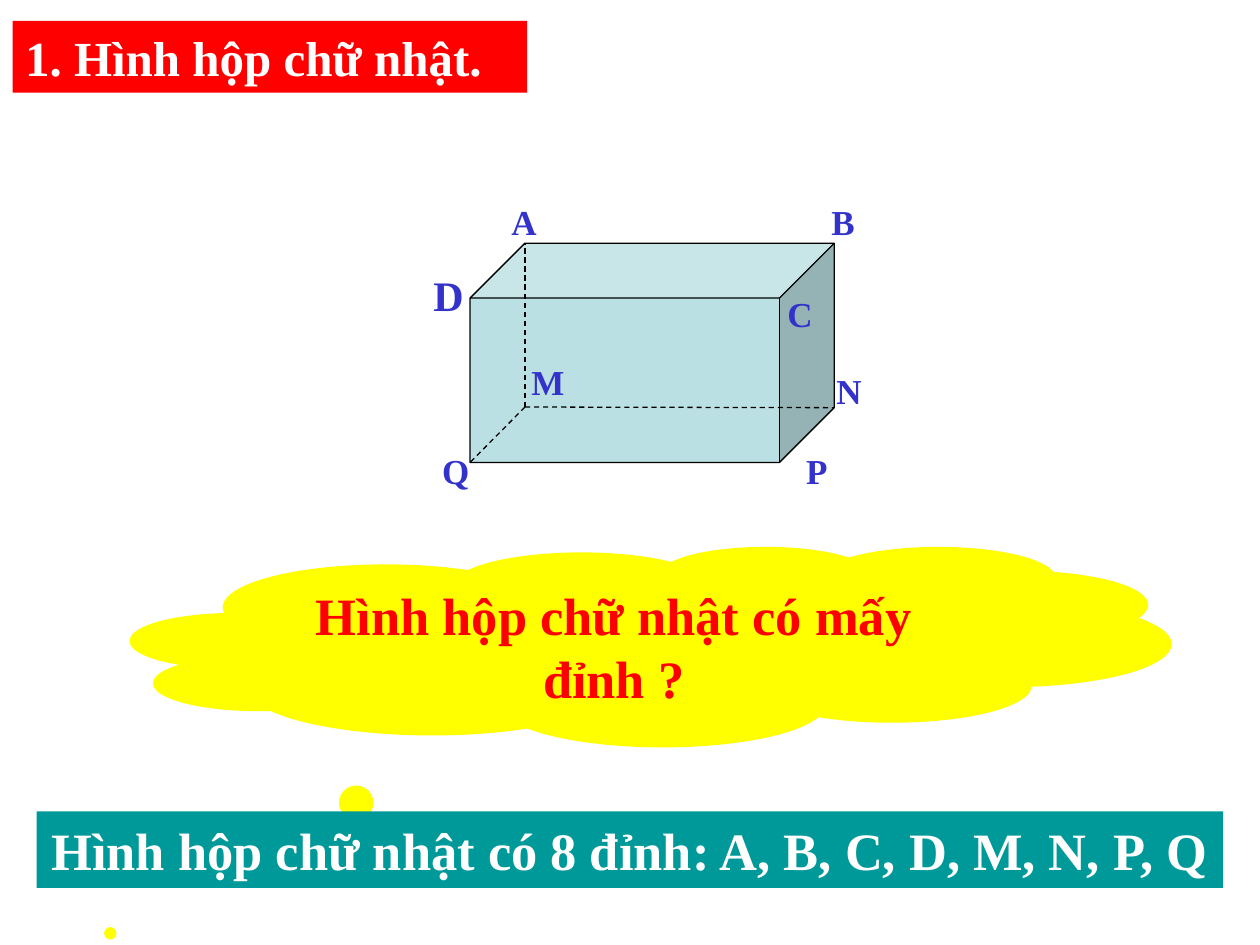
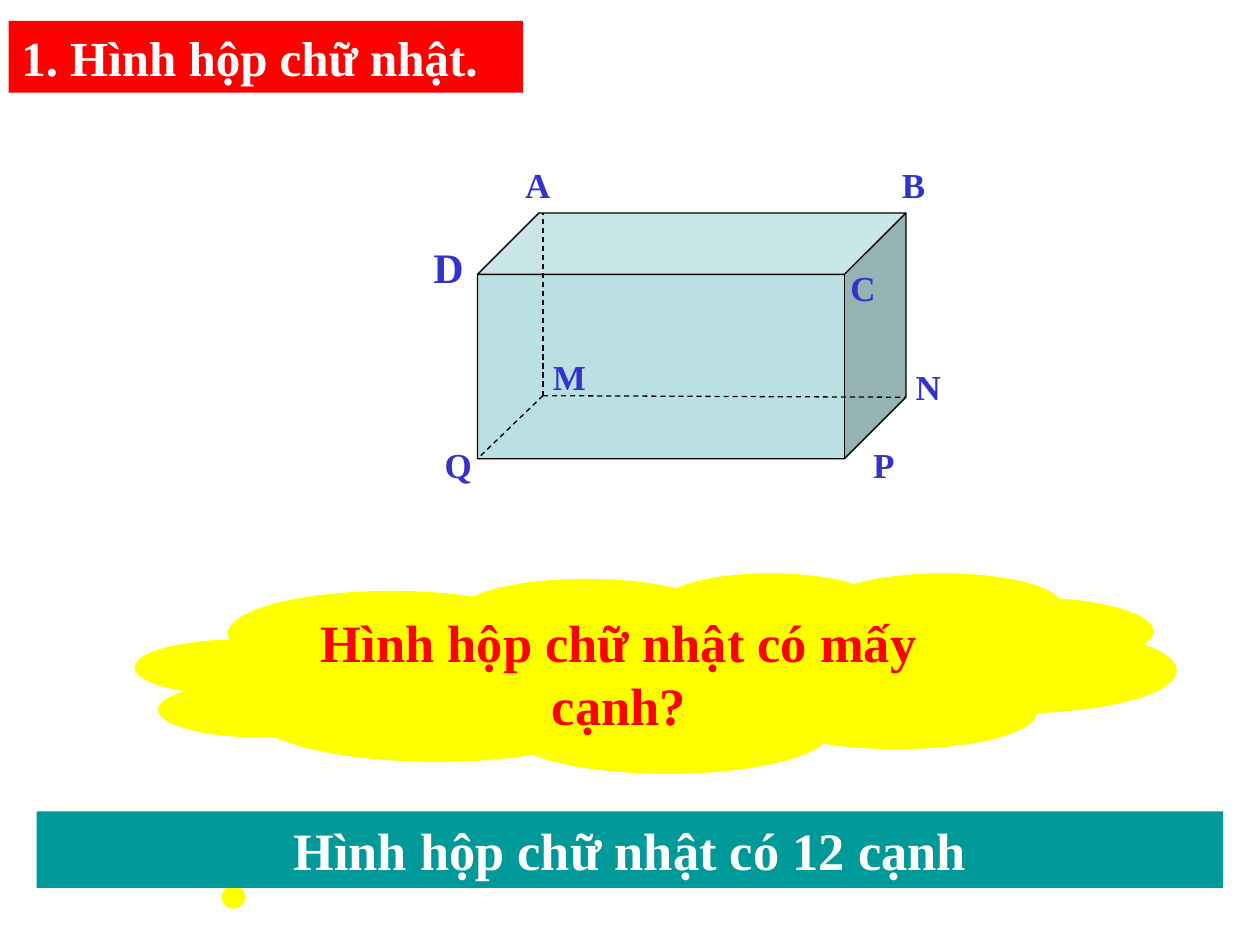
from dataclasses import dataclass

from lxml.etree import SubElement
from pptx import Presentation
from pptx.dml.color import RGBColor
from pptx.enum.dml import MSO_LINE
from pptx.enum.shapes import MSO_CONNECTOR, MSO_SHAPE
from pptx.enum.text import MSO_ANCHOR, MSO_AUTO_SIZE, PP_ALIGN
from pptx.oxml.ns import qn
from pptx.presentation import Presentation as Deck
from pptx.shapes.autoshape import Shape
from pptx.shapes.shapetree import GroupShapes
from pptx.slide import Slide
from pptx.util import Pt

Point = tuple[float, float]


@dataclass(frozen=True)
class Theme:
    font: str = "Times New Roman"
    heading_fill: RGBColor = RGBColor(0xFF, 0x00, 0x00)
    answer_fill: RGBColor = RGBColor(0x00, 0x99, 0x99)
    cloud_fill: RGBColor = RGBColor(0xFF, 0xFF, 0x00)
    cuboid_fill: RGBColor = RGBColor(0xBB, 0xE0, 0xE3)
    white: RGBColor = RGBColor(0xFF, 0xFF, 0xFF)
    question: RGBColor = RGBColor(0xFF, 0x00, 0x00)
    vertex: RGBColor = RGBColor(0x33, 0x33, 0xCC)
    edge: RGBColor = RGBColor(0x00, 0x00, 0x00)
    heading_size: float = 28
    sentence_size: float = 30
    vertex_size: float = 20
    large_vertex_size: float = 24
    line_width: float = 0.75


@dataclass(frozen=True)
class Cuboid:
    left: float
    top: float
    width: float
    height: float
    hidden_corner: Point
    label_width: float
    labels: dict[str, Point]


@dataclass(frozen=True)
class Lesson:
    heading_left: float
    cloud_at: Point
    question: str
    answer: str
    cuboid: Cuboid


THEME = Theme()
HEADING = "1. Hình hộp chữ nhật."
DEPTH = 0.25
LARGE_LABEL = "D"

LESSONS = [
    Lesson(
        7.2, (74.9, 312.5),
        "Hình hộp chữ nhật có mấy đỉnh ?",
        "Hình hộp chữ nhật có 8 đỉnh: A, B, C, D, M, N, P, Q",
        Cuboid(
            268.6, 139, 208.1, 125.3, (300, 232.6), 39.6,
            {"A": (285.1, 110.9), "B": (468, 110.9), "C": (442.8, 163.4),
             "D": (240.5, 150.5), "M": (296.6, 202.3), "N": (470.9, 207.4),
             "P": (453.6, 253.4), "Q": (245.5, 253.4)},
        ),
    ),
    Lesson(
        5, (77.8, 327.6),
        "Hình hộp chữ nhật có mấy cạnh?",
        "Hình hộp chữ nhật có 12 cạnh",
        Cuboid(
            272.9, 121.7, 244.8, 140.4, (310.3, 226.1), 46,
            {"A": (293, 90), "B": (508.3, 90), "C": (478.8, 149),
             "D": (240.5, 134.6), "M": (308.9, 199.4), "N": (516.2, 205.2),
             "P": (491.8, 249.8), "Q": (247, 249.8)},
        ),
    ),
]


def write(sp: Shape, text: str, size: float, color: RGBColor,
          align: PP_ALIGN = PP_ALIGN.LEFT,
          anchor: MSO_ANCHOR = MSO_ANCHOR.MIDDLE) -> None:
    tf = sp.text_frame
    tf.text = text
    tf.word_wrap = True
    tf.auto_size = MSO_AUTO_SIZE.NONE
    tf.vertical_anchor = anchor
    p = tf.paragraphs[0]
    p.alignment = align
    font = p.runs[0].font
    font.name, font.size, font.bold = THEME.font, Pt(size), True
    font.color.rgb = color


def fill(sp: Shape, color: RGBColor, line: RGBColor | None = None) -> None:
    """Give a shape a flat fill, with an outline only when a colour is named."""
    sp.shadow.inherit = False
    sp.fill.solid()
    sp.fill.fore_color.rgb = color
    if line is None:
        sp.line.fill.background()
    else:
        sp.line.color.rgb = line
        sp.line.width = Pt(THEME.line_width)


def add_heading(s: Slide, left: float) -> None:
    sp = s.shapes.title
    sp.left, sp.top, sp.width, sp.height = Pt(left), Pt(12), Pt(294), Pt(41)
    sp.fill.solid()
    sp.fill.fore_color.rgb = THEME.heading_fill
    write(sp, HEADING, THEME.heading_size, THEME.white)


def add_question(s: Slide, at: Point, text: str) -> None:
    sp = s.shapes.add_shape(MSO_SHAPE.CLOUD_CALLOUT, Pt(at[0]), Pt(at[1]), Pt(594), Pt(113.8))
    sp.adjustments[0], sp.adjustments[1] = -0.52, 1.44
    fill(sp, THEME.cloud_fill, THEME.cloud_fill)
    write(sp, text, THEME.sentence_size, THEME.question, PP_ALIGN.CENTER, MSO_ANCHOR.TOP)


def add_answer(s: Slide, text: str) -> None:
    sp = s.shapes.add_shape(MSO_SHAPE.RECTANGLE, Pt(21), Pt(463.7), Pt(678), Pt(43.7))
    fill(sp, THEME.answer_fill)
    write(sp, text, THEME.sentence_size, THEME.white, PP_ALIGN.CENTER)


def add_hidden_edge(shapes: GroupShapes, start: Point, end: Point) -> None:
    edge = shapes.add_connector(MSO_CONNECTOR.STRAIGHT, *map(Pt, start + end))
    edge.line.color.rgb = THEME.edge
    edge.line.width = Pt(THEME.line_width)
    edge.line.dash_style = MSO_LINE.DASH
    SubElement(edge._element.spPr, qn("a:effectLst"))


def add_vertex(shapes: GroupShapes, name: str, at: Point, width: float) -> None:
    large = name == LARGE_LABEL
    size = THEME.large_vertex_size if large else THEME.vertex_size
    sp = shapes.add_textbox(Pt(at[0]), Pt(at[1]), Pt(width), Pt(36.4 if large else 31.6))
    write(sp, name, size, THEME.vertex, anchor=MSO_ANCHOR.TOP)


def add_cuboid(s: Slide, box: Cuboid) -> None:
    """Draw the solid, its three hidden edges and its vertex names as a group."""
    shapes = s.shapes.add_group_shape().shapes
    sp = shapes.add_shape(MSO_SHAPE.CUBE, Pt(box.left), Pt(box.top), Pt(box.width), Pt(box.height))
    sp.adjustments[0] = DEPTH
    fill(sp, THEME.cuboid_fill, THEME.edge)

    right, bottom = box.left + box.width, box.top + box.height
    back_bottom = bottom - DEPTH * min(box.width, box.height)
    corner = box.hidden_corner
    for end in ((corner[0], box.top), (right, back_bottom), (box.left, bottom)):
        add_hidden_edge(shapes, corner, end)
    for name, at in box.labels.items():
        add_vertex(shapes, name, at, box.label_width)


def add_lesson(prs: Deck, lesson: Lesson) -> None:
    s = prs.slides.add_slide(prs.slide_layouts[5])
    add_question(s, lesson.cloud_at, lesson.question)
    add_heading(s, lesson.heading_left)
    add_answer(s, lesson.answer)
    add_cuboid(s, lesson.cuboid)


def main() -> None:
    prs = Presentation()
    prs.slide_width, prs.slide_height = Pt(720), Pt(540)
    for lesson in LESSONS:
        add_lesson(prs, lesson)
    prs.save("out.pptx")


if __name__ == "__main__":
    main()
